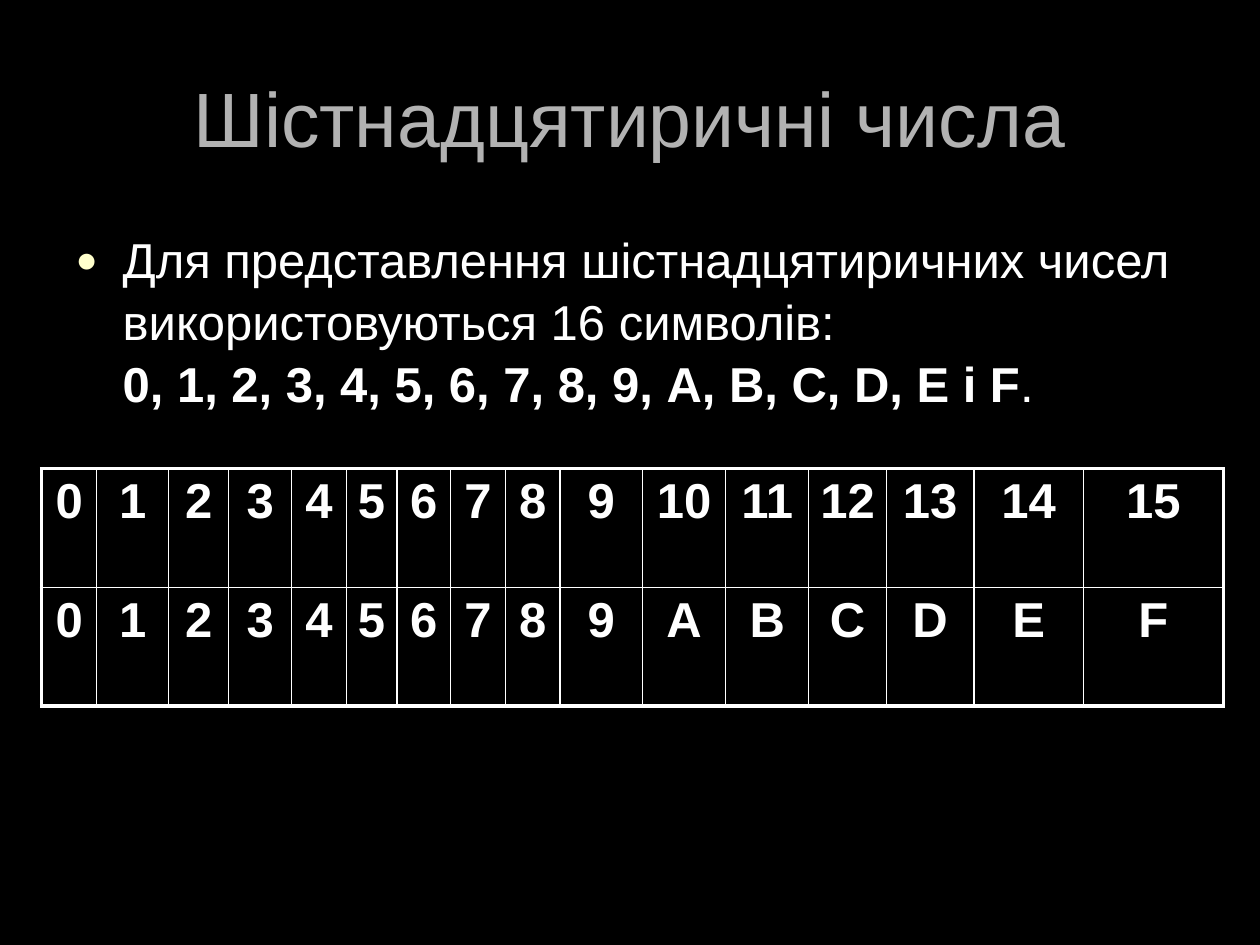
from copy import deepcopy

from lxml.etree import SubElement
from pptx import Presentation
from pptx.dml.color import RGBColor
from pptx.enum.text import MSO_ANCHOR, MSO_AUTO_SIZE, PP_ALIGN
from pptx.oxml.ns import qn
from pptx.util import Cm, Pt

COLORS = {"background": "000000", "title": "B2B2B2", "text": "FFFFFF", "bullet": "FFFFCC"}
DIGITS = "0123456789ABCDEF"
COLUMN_WIDTHS = [1.11, 1.45, 1.21, 1.27, 1.1, 1.02, 1.08, 1.11,
                 1.1, 1.66, 1.68, 1.67, 1.57, 1.76, 2.21, 2.82]


class SlideBuilder:
    font = "Arial"
    title_size = Pt(44)
    text_size = Pt(28)
    thick = Pt(2.25)
    thin = Pt(1)

    def __init__(self, prs):
        self.slide = prs.slides.add_slide(prs.slide_layouts[1])
        fill = self.slide.background.fill
        fill.solid()
        fill.fore_color.rgb = RGBColor.from_string(COLORS["background"])

    def format_run(self, r, size, color="text", bold=False):
        r.font.name = self.font
        r.font.size = size
        r.font.bold = bold
        r.font.color.rgb = RGBColor.from_string(COLORS[color])

    def place(self, sp, left, top, width, height):
        sp.left, sp.top, sp.width, sp.height = Cm(left), Cm(top), Cm(width), Cm(height)
        sp.text_frame.auto_size = MSO_AUTO_SIZE.NONE
        return sp.text_frame

    def title(self, text, *box):
        tf = self.place(self.slide.shapes.title, *box)
        tf.vertical_anchor = MSO_ANCHOR.MIDDLE
        tf.text = text
        p = tf.paragraphs[0]
        p.alignment = PP_ALIGN.CENTER
        self.format_run(p.runs[0], self.title_size, "title")

    def bullet(self, lead, symbols, end, *box):
        tf = self.place(self.slide.placeholders[1], *box)
        p = tf.paragraphs[0]
        p.text = f"{lead}\v{symbols}"
        p.add_run().text = end
        p.space_before = Pt(0)
        p.line_spacing = 1.05
        pPr = p._p.get_or_add_pPr()
        pPr.set("marL", str(Cm(0.95)))
        pPr.set("indent", str(-Cm(0.95)))
        color = SubElement(pPr, qn("a:buClr"))
        SubElement(color, qn("a:srgbClr"), val=COLORS["bullet"])
        SubElement(pPr, qn("a:buSzPct"), val="75000")
        SubElement(pPr, qn("a:buFont"), typeface=self.font)
        SubElement(pPr, qn("a:buChar"), char="●")
        for r, bold in zip(p.runs, (False, True, False)):
            self.format_run(r, self.text_size, bold=bold)
        p._p.find(qn("a:br")).append(deepcopy(p.runs[0]._r.rPr))

    def border(self, cell, side, width):
        tcPr = cell._tc.get_or_add_tcPr()
        ln = SubElement(tcPr, qn(f"a:{side}"), w=str(width))
        fill = SubElement(ln, qn("a:solidFill"))
        SubElement(fill, qn("a:srgbClr"), val=COLORS["text"])

    def cell(self, cell, text, outer_sides):
        cell.margin_left = cell.margin_right = Cm(0.23)
        cell.margin_top = cell.margin_bottom = Cm(0.11)
        cell.text = text
        p = cell.text_frame.paragraphs[0]
        p.alignment = PP_ALIGN.CENTER
        self.format_run(p.runs[0], self.text_size, bold=True)
        for side, outer in outer_sides.items():
            self.border(cell, side, self.thick if outer else self.thin)
        cell.fill.background()

    def table(self, rows, widths, left, top, row_height):
        table = self.slide.shapes.add_table(
            len(rows), len(widths), Cm(left), Cm(top),
            Cm(sum(widths)), Cm(row_height * len(rows))).table
        table.first_row = table.horz_banding = False
        for column, width in zip(table.columns, widths):
            column.width = Cm(width)
        for i, row in enumerate(rows):
            for j, text in enumerate(row):
                self.cell(table.cell(i, j), text, {
                    "lnL": j == 0, "lnR": j == len(widths) - 1,
                    "lnT": i == 0, "lnB": i == len(rows) - 1})


def main():
    prs = Presentation()
    prs.slide_width, prs.slide_height = Cm(25.4), Cm(19.05)
    s = SlideBuilder(prs)
    s.title("Шістнадцятиричні числа", 1.27, 0.76, 22.86, 3.18)
    s.bullet("Для представлення шістнадцятиричних чисел використовуються 16 символів: ",
             ", ".join(DIGITS[:-1]) + " і " + DIGITS[-1], ".",
             1.27, 4.45, 23.77, 4.27)
    decimals = [str(n) for n in range(len(DIGITS))]
    s.table([decimals, list(DIGITS)], COLUMN_WIDTHS, 0.84, 9.45, 2.39)
    prs.save("out.pptx")


if __name__ == "__main__":
    main()
